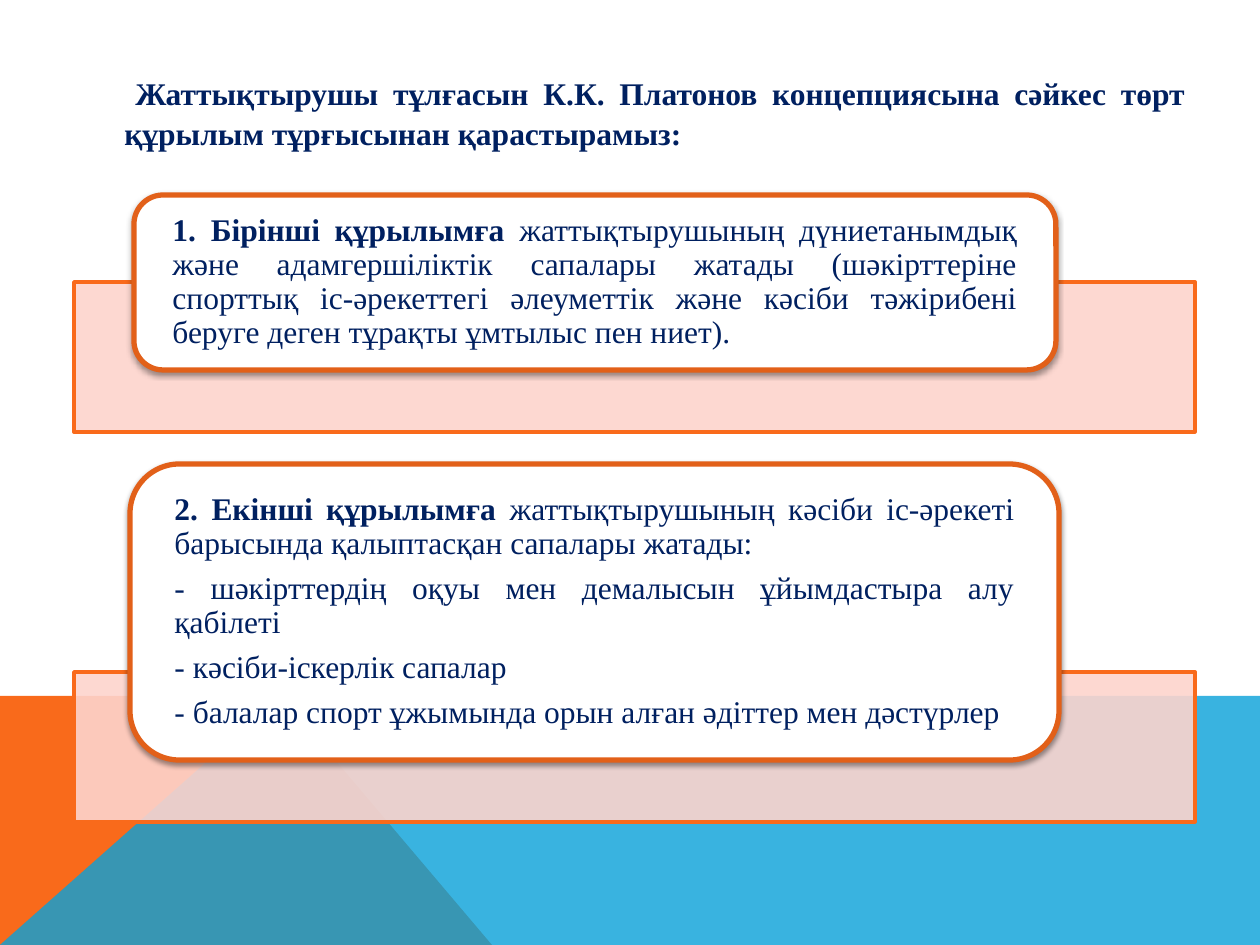
from lxml import etree
from pptx import Presentation, util as u
from pptx.dml.color import RGBColor
from pptx.enum import shapes, text
from pptx.oxml.ns import qn

# Content
HEADING = "Жаттықтырушы тұлғасын К.К. Платонов концепциясына сәйкес төрт құрылым тұрғысынан қарастырамыз:"
# Each structure: band top, card box (left, top, width, height), paragraphs of (text, bold) runs
STRUCTURES = [
    (282, (134, 195, 922, 175), [
        [("1. Бірінші құрылымға ", True),
         ("жаттықтырушының дүниетанымдық және адамгершіліктік сапалары жатады "
          "(шәкірттеріне спорттық іс-әрекеттегі әлеуметтік және кәсіби тәжірибені "
          "беруге деген тұрақты ұмтылыс пен ниет).", False)],
    ]),
    (672, (130, 464, 929, 296), [
        [("2. Екінші құрылымға ", True),
         ("жаттықтырушының кәсіби іс-әрекеті барысында қалыптасқан сапалары жатады:", False)],
        [("- шәкірттердің оқуы мен демалысын ұйымдастыра алу қабілеті", False)],
        [("- кәсіби-іскерлік сапалар", False)],
        [("- балалар спорт ұжымында орын алған әдіттер мен дәстүрлер", False)],
    ]),
]
# Footer areas: corner points, colour, opacity in percent
FOOTER = [
    ([(0, 945), (0, 696), (281, 696), (492, 945)], "F96A1B", 100),
    ([(0, 945), (281, 696), (1260, 696), (1260, 945)], "08A1D9", 80),
]
BAND_LEFT, BAND_WIDTH, BAND_HEIGHT = 74, 1121, 150
FONT, NAVY = "Times New Roman", "002060"
SCALE = 914400 / 126


def px(n):
    return u.Emu(round(n * SCALE))


def paint(shape, fill, opacity=100, line=None, width=0):
    shape.shadow.inherit = False
    shape.fill.solid()
    shape.fill.fore_color.rgb = RGBColor.from_string(fill)
    if opacity < 100:
        colour = shape.fill._xPr.find(qn("a:solidFill"))[0]
        etree.SubElement(colour, qn("a:alpha"), val=str(opacity * 1000))
    if line:
        shape.line.color.rgb = RGBColor.from_string(line)
        shape.line.width = u.Pt(width)
    else:
        shape.line.fill.background()


def drop_shadow(shape):
    effects = shape._element.spPr.find(qn("a:effectLst"))
    shadow = etree.SubElement(effects, qn("a:outerShdw"), blurRad=str(u.Pt(3.1)),
                              dist=str(u.Pt(1.6)), dir="5400000", rotWithShape="0")
    colour = etree.SubElement(shadow, qn("a:srgbClr"), val="000000")
    etree.SubElement(colour, qn("a:alpha"), val="38000")


def write(frame, paragraphs, spacing, after=0):
    frame.word_wrap = True
    for i, runs in enumerate(paragraphs):
        paragraph = frame.paragraphs[0] if i == 0 else frame.add_paragraph()
        paragraph.alignment = text.PP_ALIGN.JUSTIFY
        paragraph.line_spacing = spacing
        paragraph.space_after = u.Pt(after)
        for words, bold in runs:
            run = paragraph.add_run()
            run.text = words
            run.font.name, run.font.size, run.font.bold = FONT, u.Pt(18), bold
            run.font.color.rgb = RGBColor.from_string(NAVY)


deck = Presentation()
deck.slide_width, deck.slide_height = px(1260), px(945)
slide = deck.slides.add_slide(deck.slide_layouts[6])

# Footer
for points, colour, opacity in FOOTER:
    outline = slide.shapes.build_freeform(*points[0], scale=SCALE)
    outline.add_line_segments(points[1:], close=True)
    paint(outline.convert_to_shape(), colour, opacity)

# Heading, with a small first-line indent
heading = slide.shapes.add_textbox(px(112), px(66), px(1086), px(93))
write(heading.text_frame, [[(HEADING, True)]], 1.05)
heading.text_frame.paragraphs[0]._p.get_or_add_pPr().set("indent", str(px(11)))

# Bands, each with its card on top
for band_top, card_box, paragraphs in STRUCTURES:
    band = slide.shapes.add_shape(shapes.MSO_SHAPE.RECTANGLE, px(BAND_LEFT), px(band_top),
                                  px(BAND_WIDTH), px(BAND_HEIGHT))
    paint(band, "FDD4CD", 90, "F96A1B", 2)

    card = slide.shapes.add_shape(shapes.MSO_SHAPE.ROUNDED_RECTANGLE, *map(px, card_box))
    paint(card, "FFFFFF", 100, "E26019", 3)
    drop_shadow(card)
    frame = card.text_frame
    frame.margin_left = frame.margin_right = px(30)
    frame.margin_top = frame.margin_bottom = 0
    frame.vertical_anchor = text.MSO_ANCHOR.MIDDLE
    write(frame, paragraphs, 0.9, 6.3)

deck.save("out.pptx")
